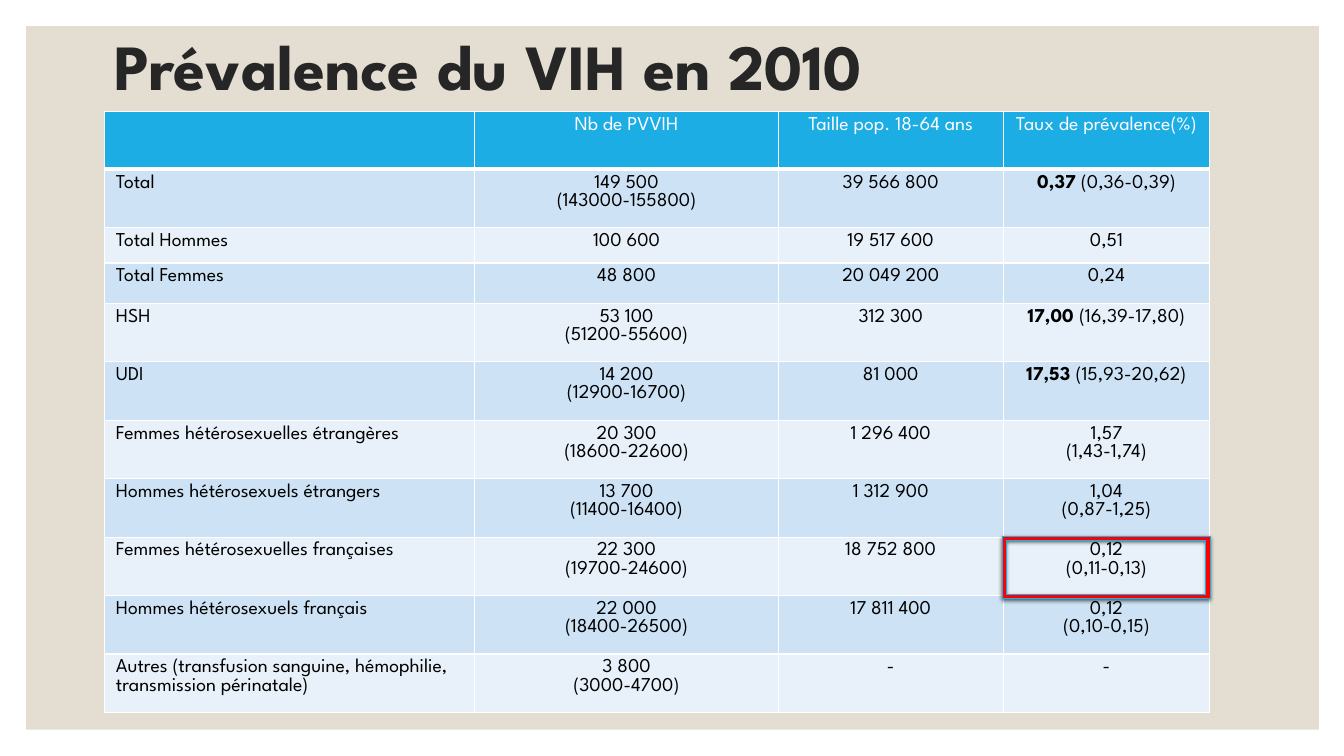
from dataclasses import dataclass

from lxml import etree
from pptx import Presentation
from pptx import util as u
from pptx.dml import color
from pptx.enum import shapes, text
from pptx.oxml import ns


@dataclass(frozen=True)
class Theme:
    font: str = "League Spartan"
    title_size: float = 46
    table_size: float = 14
    panel: str = "E3DED1"
    title: str = "262626"
    header: str = "1CADE4"
    bands: tuple[str, str] = ("CDE3F5", "E8F1FA")
    white: str = "FFFFFF"
    black: str = "000000"
    highlight: str = "FF0000"


@dataclass(frozen=True)
class Box:
    left: float
    top: float
    width: float
    height: float

    def emu(self) -> list[int]:
        return [u.Inches(n) for n in (self.left, self.top, self.width, self.height)]


@dataclass(frozen=True)
class Group:
    """One population row; a line break separates paragraphs of a cell."""
    name: str
    people: str
    population: str
    rate: str
    bold_rate: str = ""
    height: float = 0.58


THEME = Theme()
PANEL = Box(0.26, 0.26, 12.82, 6.98)
TITLE = Box(1.04, 0.07, 11.21, 1.25)
TABLE = Box(1.04, 1.11, 10.96, 5.96)
HIGHLIGHT = Box(9.94, 5.32, 2.06, 0.62)
COLUMN_WIDTHS = (3.67, 3.01, 2.23, 2.05)
HEADER_HEIGHT = 0.57
HEADERS = ("", "Nb de PVVIH", "Taille pop. 18-64 ans", "Taux de prévalence(%)")
GROUPS = (
    Group("Total", "149 500\n(143000-155800)", "39 566 800", "(0,36-0,39)", "0,37 "),
    Group("Total Hommes", "100 600", "19 517 600", "0,51", height=0.35),
    Group("Total Femmes", "48 800", "20 049 200", "0,24", height=0.4),
    Group("HSH", "53 100\n(51200-55600)", "312 300", "(16,39-17,80)", "17,00 "),
    Group("UDI", "14 200\n(12900-16700)", "81 000", "(15,93-20,62)", "17,53 "),
    Group("Femmes hétérosexuelles étrangères", "20 300\n(18600-22600)",
          "1 296 400", "1,57\n(1,43-1,74)"),
    Group("Hommes hétérosexuels étrangers", "13 700\n(11400-16400)",
          "1 312 900", "1,04\n(0,87-1,25)"),
    Group("Femmes hétérosexuelles françaises", "22 300\n(19700-24600)",
          "18 752 800", "0,12\n(0,11-0,13)"),
    Group("Hommes hétérosexuels français", "22 000\n(18400-26500)",
          "17 811 400", "0,12\n(0,10-0,15)"),
    Group("Autres (transfusion sanguine, hémophilie, transmission périnatale)",
          "3 800\n(3000-4700)", "-", "-"),
)


def rgb(value: str) -> color.RGBColor:
    return color.RGBColor.from_string(value)


def add_run(paragraph, words: str, size: float, ink: str, bold: bool = False) -> None:
    run = paragraph.add_run()
    run.text = words
    run.font.name = THEME.font
    run.font.size = u.Pt(size)
    run.font.bold = bold
    run.font.color.rgb = rgb(ink)


def add_xml_color(parent, value: str):
    return etree.SubElement(parent, ns.qn("a:srgbClr"), val=value)


def set_borders(cell, bottom: float) -> None:
    properties = cell._tc.get_or_add_tcPr()
    widths = {"lnL": 1, "lnR": 1, "lnT": 1, "lnB": bottom}
    for position, (side, width) in enumerate(widths.items()):
        line = etree.Element(ns.qn(f"a:{side}"), w=str(u.Pt(width)))
        add_xml_color(etree.SubElement(line, ns.qn("a:solidFill")), THEME.white)
        properties.insert(position, line)


def fill_cell(cell, words: str, fill: str, ink: str, centered: bool,
              bold_lead: str = "", bottom: float = 1) -> None:
    cell.fill.solid()
    cell.fill.fore_color.rgb = rgb(fill)
    set_borders(cell, bottom)
    cell.margin_left = cell.margin_right = u.Inches(0.11)
    cell.margin_top = cell.margin_bottom = u.Inches(0.05)
    if not words:
        return
    for index, line in enumerate(words.split("\n")):
        frame = cell.text_frame
        paragraph = frame.add_paragraph() if index else frame.paragraphs[0]
        if centered:
            paragraph.alignment = text.PP_ALIGN.CENTER
        if bold_lead and index == 0:
            add_run(paragraph, bold_lead, THEME.table_size, ink, bold=True)
        add_run(paragraph, line, THEME.table_size, ink)


def add_title(slide) -> None:
    title = slide.shapes.title
    title.left, title.top, title.width, title.height = TITLE.emu()
    frame = title.text_frame
    frame.word_wrap = True
    frame.auto_size = text.MSO_AUTO_SIZE.NONE
    frame.vertical_anchor = text.MSO_ANCHOR.MIDDLE
    paragraph = frame.paragraphs[0]
    paragraph.alignment = text.PP_ALIGN.LEFT
    paragraph.line_spacing = 0.9
    add_run(paragraph, "Prévalence du VIH en 2010", THEME.title_size, THEME.title, bold=True)


def add_panel(slide) -> None:
    panel = slide.shapes.add_shape(shapes.MSO_SHAPE.RECTANGLE, *PANEL.emu())
    panel.shadow.inherit = False
    panel.fill.solid()
    panel.fill.fore_color.rgb = rgb(THEME.panel)
    panel.line.fill.background()
    # The panel lies behind the title
    slide.shapes.title._element.addprevious(panel._element)


def add_prevalence_table(slide) -> None:
    table = slide.shapes.add_table(len(GROUPS) + 1, len(HEADERS), *TABLE.emu()).table
    for column, width in zip(table.columns, COLUMN_WIDTHS):
        column.width = u.Inches(width)
    heights = [HEADER_HEIGHT] + [group.height for group in GROUPS]
    for row, height in zip(table.rows, heights):
        row.height = u.Inches(height)

    for column, words in enumerate(HEADERS):
        fill_cell(table.cell(0, column), words, THEME.header, THEME.white, True, bottom=3)
    for row, group in enumerate(GROUPS, start=1):
        fill = THEME.bands[(row - 1) % 2]
        values = (group.name, group.people, group.population, group.rate)
        for column, words in enumerate(values):
            lead = group.bold_rate if column == 3 else ""
            fill_cell(table.cell(row, column), words, fill, THEME.black, column > 0, lead)


def add_highlight(slide) -> None:
    frame = slide.shapes.add_shape(shapes.MSO_SHAPE.FRAME, *HIGHLIGHT.emu())
    frame.adjustments[0] = 0.065
    frame.fill.solid()
    frame.fill.fore_color.rgb = rgb(THEME.highlight)
    frame.line.color.rgb = rgb(THEME.header)
    frame.line.width = u.Pt(0.5)
    # Soft shadow falling straight down
    frame.shadow.inherit = False
    effects = frame._element.spPr.find(ns.qn("a:effectLst"))
    shadow = etree.SubElement(effects, ns.qn("a:outerShdw"), blurRad=str(u.Pt(3)),
                              dist=str(u.Pt(1)), dir="5400000", rotWithShape="0")
    etree.SubElement(add_xml_color(shadow, THEME.black), ns.qn("a:alpha"), val="63000")


def main() -> None:
    presentation = Presentation()
    presentation.slide_width = u.Inches(13.33)
    presentation.slide_height = u.Inches(7.5)
    slide = presentation.slides.add_slide(presentation.slide_layouts.get_by_name("Title Only"))
    add_title(slide)
    add_panel(slide)
    add_prevalence_table(slide)
    add_highlight(slide)
    presentation.save("out.pptx")


if __name__ == "__main__":
    main()
